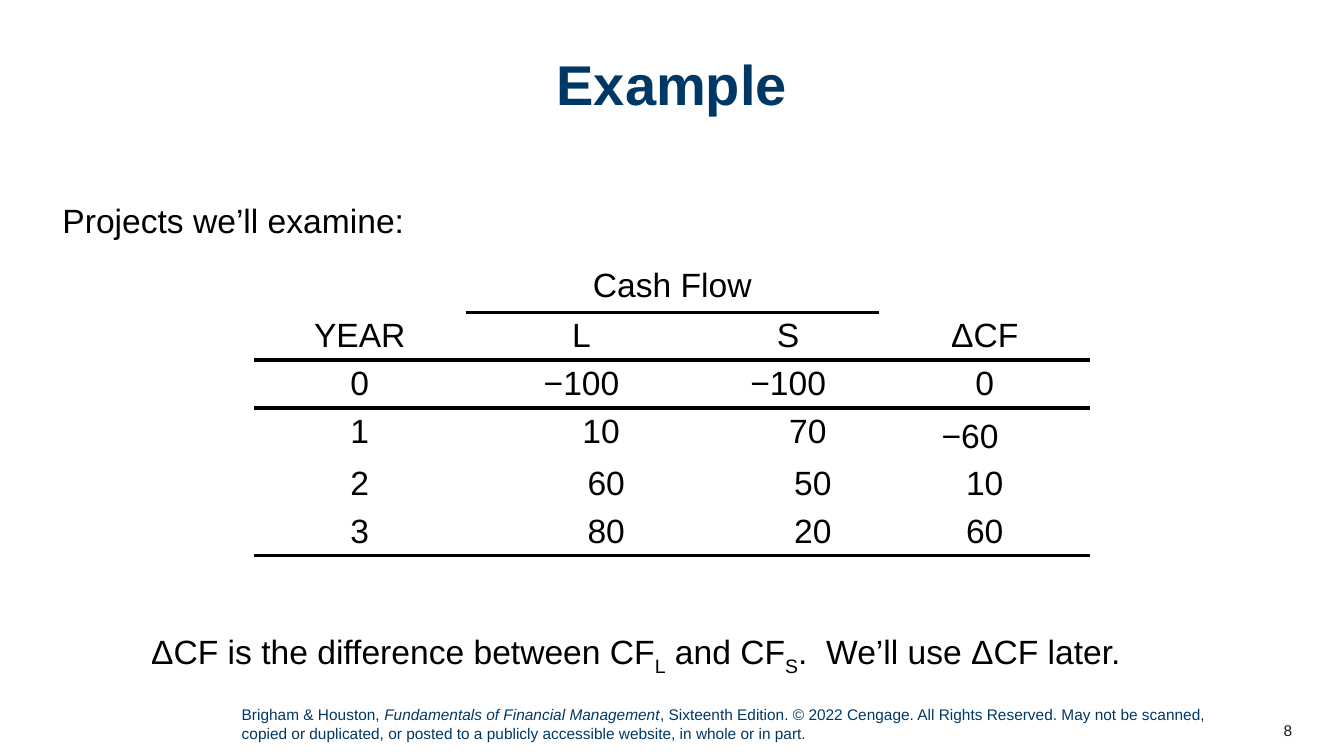
from pptx import Presentation
from pptx.dml.color import RGBColor
from pptx.enum.text import MSO_ANCHOR, MSO_AUTO_SIZE, PP_ALIGN
from pptx.oxml import parse_xml
from pptx.oxml.ns import nsdecls
from pptx.util import Pt

LEFT, CENTER, RIGHT = PP_ALIGN.LEFT, PP_ALIGN.CENTER, PP_ALIGN.RIGHT
TOP, MIDDLE = MSO_ANCHOR.TOP, MSO_ANCHOR.MIDDLE
NO_FIT = MSO_AUTO_SIZE.NONE
FONT = "Arial"
NAVY, BLACK, INK = "003865", "000000", "181717"
COMPARISON_LAYOUT = 4
PLAIN_TABLE = "{2D5ABB26-0587-4C30-8999-92F81FD0307C}"

COLUMNS = [151.2, 165.6, 129.6, 151.2]
CASH_FLOWS = [
    ["YEAR", "L", "S", "ΔCF"],
    ["0", "−100", "−100", "0"],
    ["1", "10", "70", "−60"],
    ["2", "60", "50", "10"],
    ["3", "80", "20", "60"],
]
PROJECT_INDENT = {2: 28.8, 3: 36, 4: 36}


def rgb(color):
    """Return the colour for a hex string."""
    return RGBColor.from_string(color)


def place(sp, box):
    """Move a shape to a left, top, width, height box in points."""
    sp.left, sp.top, sp.width, sp.height = [Pt(v) for v in box]


def add_run(p, text, size, color, bold=False, italic=False, subscript=False):
    """Append one formatted run to a paragraph."""
    r = p.add_run()
    r.text = text
    f = r.font
    f.name, f.size, f.bold, f.italic = FONT, Pt(size), bold, italic
    f.color.rgb = rgb(color)
    if subscript:
        r._r.get_or_add_rPr().set("baseline", "-25000")


def prepare(sp, box, align=LEFT, anchor=TOP):
    """Place a text shape and return its first paragraph."""
    place(sp, box)
    tf = sp.text_frame
    tf.word_wrap, tf.auto_size, tf.vertical_anchor = True, NO_FIT, anchor
    p = tf.paragraphs[0]
    p.alignment, p.space_before = align, Pt(0)
    return p


def title(s, box):
    """Fill the title placeholder."""
    p = prepare(s.shapes.title, box, CENTER)
    p.line_spacing = 0.9
    add_run(p, "Example", 40, NAVY, bold=True)


def body(s, idx, box, parts, align=LEFT):
    """Fill a body placeholder with text and subscript parts."""
    p = prepare(s.placeholders[idx], box, align)
    pPr = p._p.get_or_add_pPr()
    pPr.set("marL", "0")
    pPr.set("indent", "0")
    pPr.append(parse_xml(f"<a:buNone {nsdecls('a')}/>"))
    for text, subscript in parts:
        add_run(p, text, 24, BLACK, subscript=subscript)


def border(cell, top, bottom):
    """Draw the heavy rules above and below a cell."""
    sides = [tag for tag, shown in (("lnT", top), ("lnB", bottom)) if shown]
    for i, tag in enumerate(sides):
        ln = parse_xml(
            f'<a:{tag} {nsdecls("a")} w="{Pt(3)}"><a:solidFill>'
            f'<a:srgbClr val="{BLACK}"/></a:solidFill></a:{tag}>')
        cell._tc.get_or_add_tcPr().insert(i, ln)


def cash_flow_table(s, box):
    """Build the table of project cash flows."""
    rows, cols = len(CASH_FLOWS), len(COLUMNS)
    table = s.shapes.add_table(rows, cols, *[Pt(v) for v in box]).table
    table.first_row = table.horz_banding = False
    table._tbl.tblPr[0].text = PLAIN_TABLE
    for column, width in zip(table.columns, COLUMNS):
        column.width = Pt(width)
    for i, values in enumerate(CASH_FLOWS):
        table.rows[i].height = Pt(box[3] / rows)
        for j, value in enumerate(values):
            cell = table.cell(i, j)
            project = j in (1, 2)
            shifted = value == "−60"
            cell.margin_left = Pt(PROJECT_INDENT.get(i, 0.72) if project else 0.72)
            cell.margin_right = Pt(21.6 if shifted else 0.72)
            cell.margin_top = Pt(7.2 if shifted else 3.6)
            cell.margin_bottom = Pt(3.6)
            cell.fill.background()
            border(cell, i == 1 or i == 0 and project, i in (0, rows - 1))
            p = cell.text_frame.paragraphs[0]
            p.alignment = CENTER
            add_run(p, value, 24, BLACK)


def footer(s, box):
    """Add the copyright line and the page number beside it."""
    left, top, width, height = box
    p = prepare(s.shapes.add_textbox(0, 0, 0, 0), box)
    add_run(p, "Brigham & Houston, ", 11, NAVY)
    add_run(p, "Fundamentals of Financial Management", 11, NAVY, italic=True)
    add_run(p, ", Sixteenth Edition. © 2022 Cengage. All Rights Reserved. "
            "May not be scanned, copied or duplicated, or posted to a publicly "
            "accessible website, in whole or in part.", 11, NAVY)
    number_box = (left + width + 1.4, top + 7.2, 57.6, 28.8)
    p = prepare(s.shapes.add_textbox(0, 0, 0, 0), number_box, RIGHT, MIDDLE)
    add_run(p, "8", 11, INK)


def example_slide(prs):
    """Build the slide comparing two projects."""
    s = prs.slides.add_slide(prs.slide_layouts[COMPARISON_LAYOUT])
    title(s, (37.4, 37.4, 884.9, 95.8))
    body(s, 1, (37.4, 139, 871.9, 43.2), [("Projects we’ll examine:", False)])
    body(s, 2, (379.4, 185, 201.6, 28.8), [("Cash Flow", False)], CENTER)
    cash_flow_table(s, (181.4, 223.2, sum(COLUMNS), 151.2))
    body(s, 3, (100.8, 447.1, 722.2, 47.5), [
        ("ΔCF is the difference between CF", False), ("L", True),
        (" and CF", False), ("S", True),
        (".  We’ll use ΔCF later.", False)])
    unused = s.placeholders[4]._element
    unused.getparent().remove(unused)
    footer(s, (165.6, 500.4, 705.6, 33.8))


def main():
    """Create and save the presentation."""
    prs = Presentation()
    prs.slide_width, prs.slide_height = Pt(960), Pt(540)
    example_slide(prs)
    prs.save("out.pptx")


if __name__ == "__main__":
    main()
